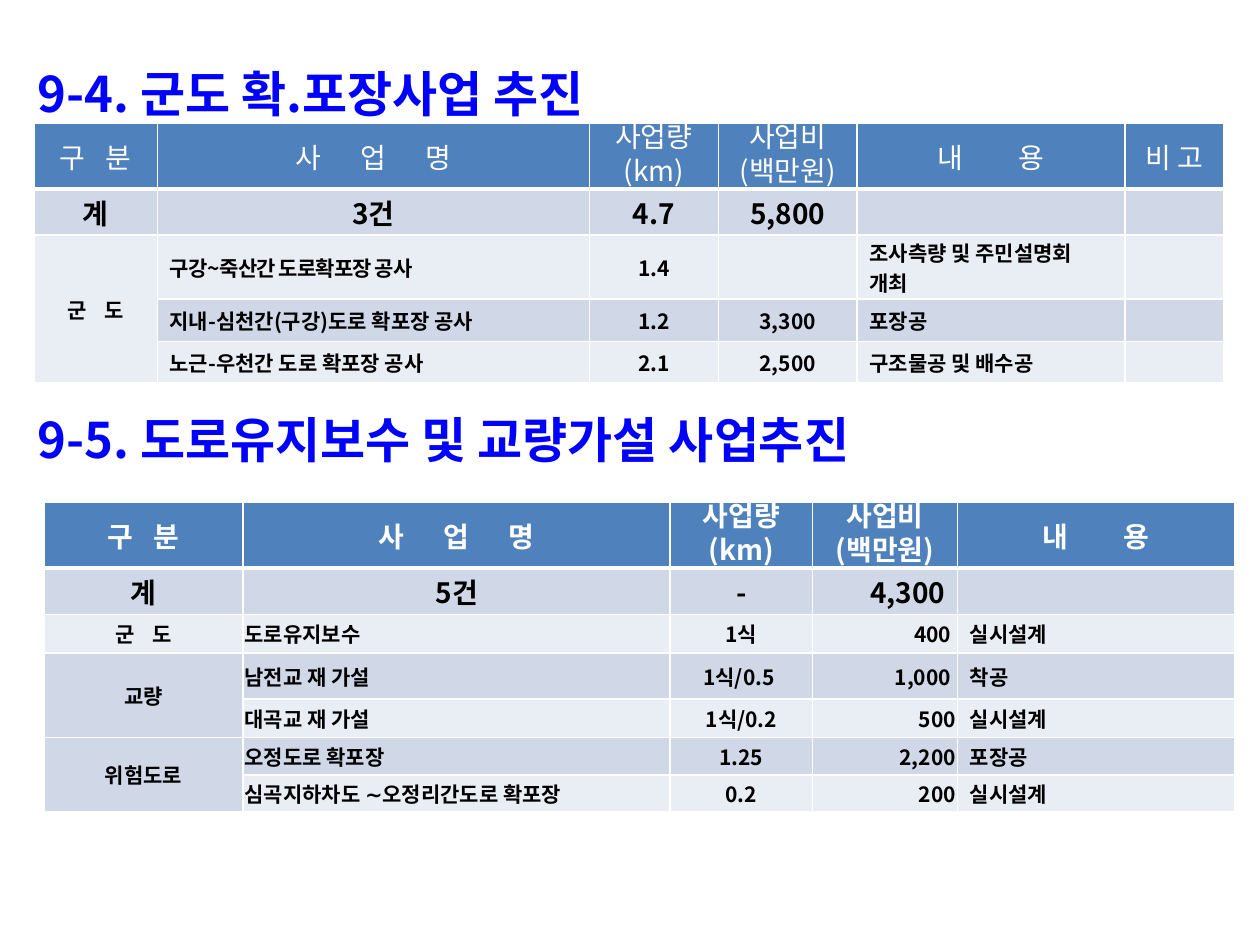
"""Build a slide with two county road project tables under blue headings."""
import pptx
import pptx.dml.color
import pptx.enum.text
import pptx.oxml
import pptx.oxml.ns
import pptx.util

Cm, Pt = pptx.util.Cm, pptx.util.Pt
RGBColor = pptx.dml.color.RGBColor
ALIGN = pptx.enum.text.PP_ALIGN
ANCHOR = pptx.enum.text.MSO_ANCHOR

FONT = "Noto Sans CJK KR"
BLUE = RGBColor(0x00, 0x00, 0xFF)
BLACK = RGBColor(0x00, 0x00, 0x00)
WHITE = RGBColor(0xFF, 0xFF, 0xFF)
HEADER = RGBColor(0x4F, 0x81, 0xBD)
BANDS = (RGBColor(0xE9, 0xED, 0xF4), RGBColor(0xD0, 0xD8, 0xE8))
ALIGNS = {"l": ALIGN.LEFT, "c": ALIGN.CENTER, "r": ALIGN.RIGHT}
LETTER_SPACING = {"구 분": 4, "사 업 명": 9.4, "내 용": 14, "군 도": 3.7,
                  "구강~죽산간 도로확포장 공사": -0.5}

ROADS = {
    "left": 0.69, "top": 2.49, "header_bold": False,
    "columns": (2.48, 8.71, 2.6, 2.8, 5.4, 2.0),
    "heights": (1.32, 0.93, 1.29, 0.85, 0.84),
    "total_aligns": "cccccc", "aligns": "clcclc",
    "tight": (), "spans": ((2, 4),),
    "rows": (
        ("구 분", "사 업 명", "사업량\n(km)", "사업비\n(백만원)", "내 용", "비 고"),
        ("계", "3건", "4.7", "5,800", "", ""),
        ("군 도", "구강~죽산간 도로확포장 공사", "1.4", "", "조사측량 및 주민설명회 개최", ""),
        ("", "지내-심천간(구강)도로 확포장 공사", "1.2", "3,300", "포장공", ""),
        ("", "노근-우천간 도로 확포장 공사", "2.1", "2,500", "구조물공 및 배수공", ""),
    ),
}
BRIDGES = {
    "left": 0.89, "top": 10.13, "header_bold": True,
    "columns": (4.01, 8.61, 2.87, 2.92, 5.59),
    "heights": (1.32, 0.94, 0.77, 0.93, 0.78, 0.75, 0.75),
    "total_aligns": "cccrc", "aligns": "clcrl",
    "tight": (1, 2, 3), "spans": ((3, 4), (5, 6)),
    "rows": (
        ("구 분", "사 업 명", "사업량\n(km)", "사업비\n(백만원)", "내 용"),
        ("계", "5건", "-", "4,300", ""),
        ("군 도", "도로유지보수", "1식", "400 ", "실시설계"),
        ("교량", "남전교 재 가설", "1식/0.5 ", "1,000 ", "착공"),
        ("", "대곡교 재 가설", "1식/0.2", "500", "실시설계"),
        ("위험도로", "오정도로 확포장", "1.25", "2,200", "포장공"),
        ("", "심곡지하차도 ∼오정리간도로 확포장", "0.2", "200", "실시설계"),
    ),
}


def apply(target, values):
    """Set each named attribute of the target."""
    for name, value in values.items():
        setattr(target, name, value)


def write(para, text, size, color, bold):
    """Add one formatted span of text to a paragraph."""
    span = para.add_run()
    span.text = text
    apply(span.font, {"name": FONT, "size": Pt(size), "bold": bold})
    span.font.color.rgb = color
    properties = span.font._element
    if text in LETTER_SPACING:
        properties.set("spc", str(round(LETTER_SPACING[text] * 100)))
    east_asian = pptx.oxml.parse_xml(
        f'<a:ea {pptx.oxml.ns.nsdecls("a")} typeface="{FONT}"/>')
    properties.find(pptx.oxml.ns.qn("a:latin")).addnext(east_asian)


def write_heading(box, text, top, line_spacing):
    """Place a heading box and fill in its text."""
    apply(box, {"left": Cm(0.51), "top": Cm(top),
                "width": Cm(24.79), "height": Cm(2)})
    apply(box.text_frame, {"word_wrap": True, "vertical_anchor": ANCHOR.TOP,
                           "auto_size": pptx.enum.text.MSO_AUTO_SIZE.NONE})
    para = box.text_frame.paragraphs[0]
    apply(para, {"alignment": ALIGN.LEFT, "line_spacing": line_spacing,
                 "space_before": Pt(0)})
    write(para, text, 28, BLUE, True)


def add_borders(cell, bottom_width):
    """Draw white lines on the four sides of a cell."""
    for side, width in zip("LRTB", (1, 1, 1, bottom_width)):
        cell._tc.get_or_add_tcPr().append(pptx.oxml.parse_xml(
            f'<a:ln{side} {pptx.oxml.ns.nsdecls("a")} w="{Pt(width)}">'
            f'<a:solidFill><a:srgbClr val="{WHITE}"/></a:solidFill></a:ln{side}>'))


def fill_cell(cell, text, style):
    """Fill a cell with its colour, borders and paragraphs."""
    margin = Cm(0.03 if style["tight"] else 0.25)
    apply(cell, {"margin_left": margin, "margin_right": margin,
                 "margin_top": 0, "margin_bottom": 0,
                 "vertical_anchor": ANCHOR.MIDDLE})
    add_borders(cell, style["bottom"])
    cell.fill.solid()
    cell.fill.fore_color.rgb = style["fill"]
    lines = text.split("\n")
    for index, line in enumerate(lines):
        para = cell.text_frame.add_paragraph() if index else cell.text_frame.paragraphs[0]
        apply(para, {"alignment": ALIGNS[style["align"]],
                     "line_spacing": 0.7 if len(lines) > 1 else 1.0,
                     "space_before": Pt(0 if style["tight"] else style["size"] * 0.2)})
        if line:
            write(para, line, style["size"], style["color"], style["bold"])
        else:
            para._p.get_or_add_endParaRPr().set("sz", "1200")


def cell_style(plan, row, column):
    """Work out the format of a cell from its row and column."""
    header = row == 0
    aligns = plan["aligns"] if row > 1 else plan["total_aligns"]
    return {"fill": HEADER if header else BANDS[row % 2],
            "color": WHITE if header else BLACK,
            "bold": plan["header_bold"] if header else True,
            "bottom": 3 if header else 1,
            "size": 16 if row < 2 else 12,
            "align": "c" if header else aligns[column],
            "tight": row > 1 and column in plan["tight"]}


def add_project_table(page, plan):
    """Add a project table with merged category cells."""
    rows, columns, heights = plan["rows"], plan["columns"], plan["heights"]
    table = page.shapes.add_table(
        len(rows), len(columns), Cm(plan["left"]), Cm(plan["top"]),
        Cm(sum(columns)), Cm(sum(heights))).table
    for column, width in zip(table.columns, columns):
        column.width = Cm(width)
    for row, height in zip(table.rows, heights):
        row.height = Cm(height)
    for row, texts in enumerate(rows):
        for column, text in enumerate(texts):
            fill_cell(table.cell(row, column), text, cell_style(plan, row, column))
    for first, last in plan["spans"]:
        table.cell(first, 0).merge(table.cell(last, 0))


def main():
    """Build the deck and save it."""
    deck = pptx.Presentation()
    apply(deck, {"slide_width": Cm(25.4), "slide_height": Cm(19.05)})
    page = deck.slides.add_slide(deck.slide_layouts[5])
    write_heading(page.shapes.title, "9-4. 군도 확.포장사업 추진", 0.91, 1.2)
    add_project_table(page, ROADS)
    box = page.shapes.add_textbox(0, 0, 0, 0)
    write_heading(box, "9-5. 도로유지보수 및 교량가설 사업추진", 8.13, 1.0)
    add_project_table(page, BRIDGES)
    deck.save("out.pptx")


if __name__ == "__main__":
    main()
